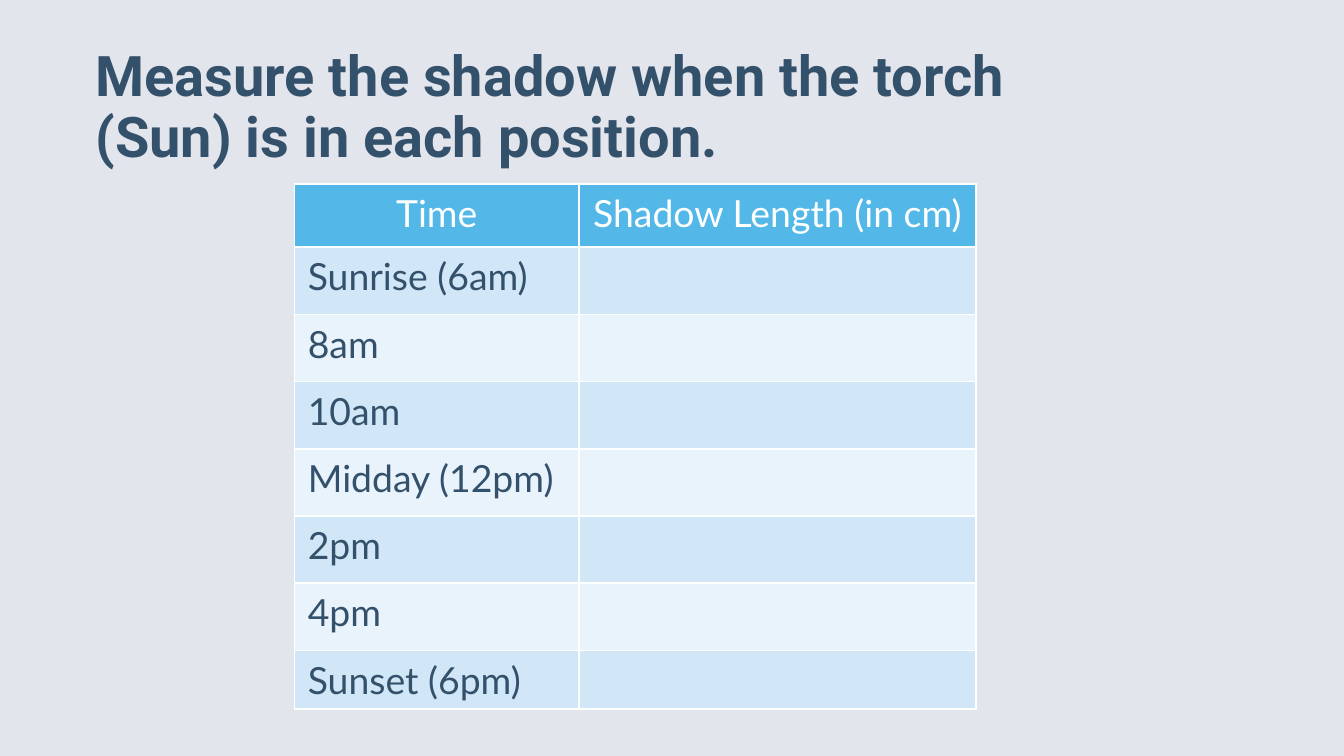
import pptx
import pptx.dml.color
import pptx.enum.text
import pptx.oxml.ns
import pptx.util
from lxml import etree
from pptx.util import Inches

RGBColor = pptx.dml.color.RGBColor
BACKGROUND = RGBColor(0xE3, 0xE5, 0xED)
NAVY = RGBColor(0x34, 0x51, 0x6C)
WHITE = RGBColor(0xFE, 0xFF, 0xFF)
HEADER_BLUE = RGBColor(0x53, 0xB7, 0xE8)
BAND_DARK = RGBColor(0xD1, 0xE6, 0xF6)
BAND_LIGHT = RGBColor(0xE9, 0xF3, 0xFB)

HEADINGS = ["Time", "Shadow Length (in cm)"]
TIMES = ["Sunrise (6am)", "8am", "10am", "Midday (12pm)", "2pm", "4pm", "Sunset (6pm)"]
COLUMN_WIDTHS = [2.12, 2.95]
ROW_HEIGHTS = [0.47] + [0.5] * 6 + [0.43]


def add_borders(cell):
    """Draw a white 1 pt line on each side of the cell."""
    properties = cell._tc.get_or_add_tcPr()
    for side in "LRTB":
        border = etree.SubElement(properties, pptx.oxml.ns.qn(f"a:ln{side}"), w=str(pptx.util.Pt(1)))
        fill = etree.SubElement(border, pptx.oxml.ns.qn("a:solidFill"))
        etree.SubElement(fill, pptx.oxml.ns.qn("a:srgbClr"), val=str(WHITE))


presentation = pptx.Presentation()
presentation.slide_width = Inches(10)
presentation.slide_height = Inches(10) * 9 // 16
slide = presentation.slides.add_slide(presentation.slide_layouts[6])
slide.background.fill.solid()
slide.background.fill.fore_color.rgb = BACKGROUND

# Instruction
instruction = slide.shapes.add_textbox(Inches(0.71), Inches(0.56), Inches(6.98), Inches(0.7)).text_frame
instruction.word_wrap = True
instruction.vertical_anchor = pptx.enum.text.MSO_ANCHOR.BOTTOM
instruction.margin_left = instruction.margin_right = 0
instruction.margin_top = instruction.margin_bottom = 0
sentence = instruction.paragraphs[0]
sentence.text = "Measure the shadow when the torch (Sun) is in each position."
sentence.line_spacing = 0.9
sentence.font.name = "Roboto"
sentence.font.size = pptx.util.Pt(30)
sentence.font.bold = True
sentence.font.color.rgb = NAVY

# Measurement table
rows = [HEADINGS] + [[time, ""] for time in TIMES]
measurements = slide.shapes.add_table(
    len(rows), len(HEADINGS), Inches(2.19), Inches(1.37),
    Inches(sum(COLUMN_WIDTHS)), Inches(sum(ROW_HEIGHTS)),
).table
measurements.horz_banding = False
for column, width in zip(measurements.columns, COLUMN_WIDTHS):
    column.width = Inches(width)

for row_index, (row, height, texts) in enumerate(zip(measurements.rows, ROW_HEIGHTS, rows)):
    row.height = Inches(height)
    is_header = row_index == 0
    band = BAND_DARK if row_index % 2 else BAND_LIGHT
    for cell, text in zip(row.cells, texts):
        add_borders(cell)
        cell.fill.solid()
        cell.fill.fore_color.rgb = HEADER_BLUE if is_header else band
        entry = cell.text_frame.paragraphs[0]
        if text:
            entry.text = text
        if is_header:
            entry.alignment = pptx.enum.text.PP_ALIGN.CENTER
        entry.font.name = "Lato"
        entry.font.size = pptx.util.Pt(20)
        entry.font.bold = False
        entry.font.color.rgb = WHITE if is_header else NAVY

presentation.save("out.pptx")
